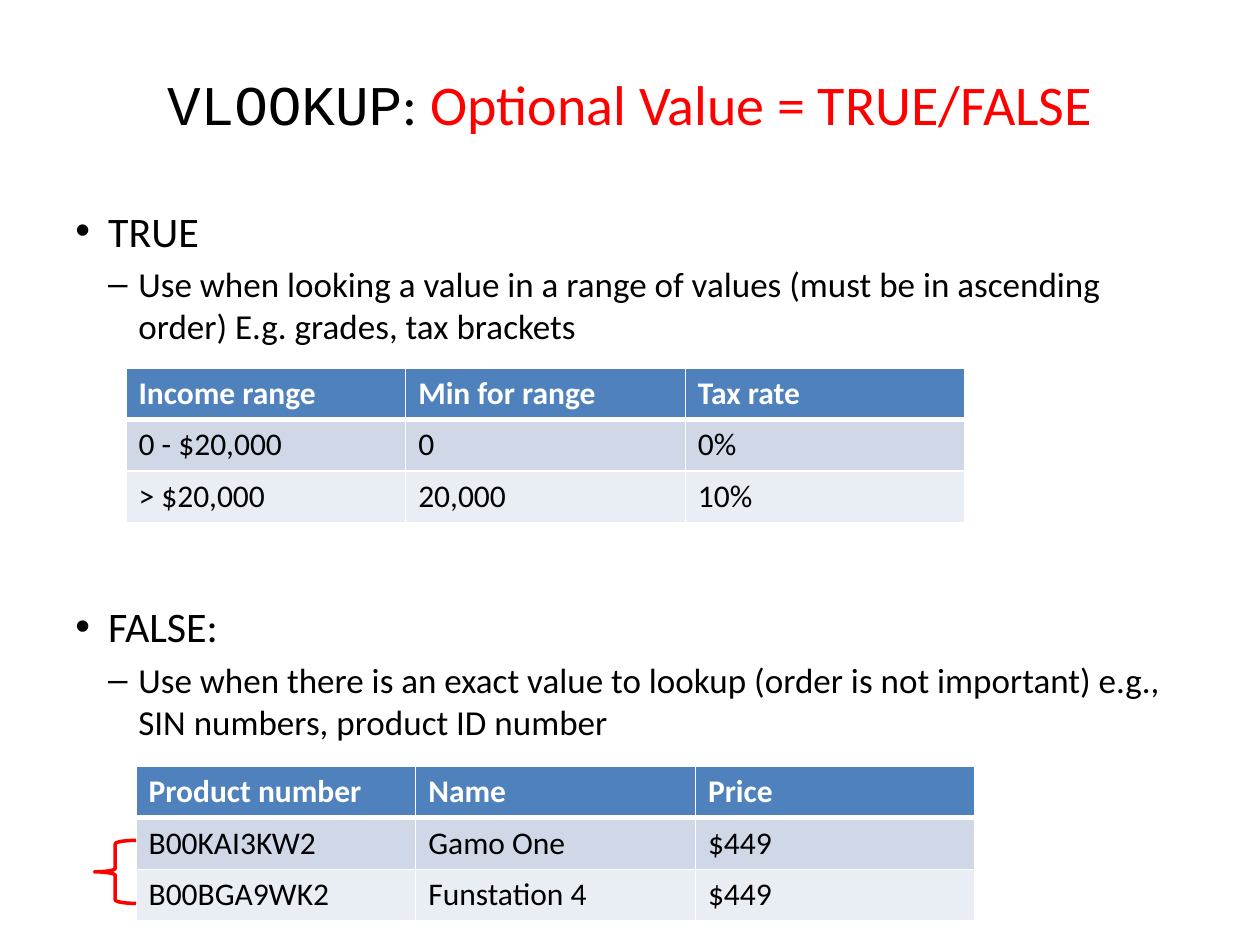
from dataclasses import dataclass

from lxml import etree
from pptx import Presentation
from pptx.dml.color import RGBColor
from pptx.enum.shapes import MSO_SHAPE
from pptx.enum.text import MSO_ANCHOR, PP_ALIGN
from pptx.oxml.ns import qn
from pptx.util import Inches, Pt

LEFT_BRACE = MSO_SHAPE.LEFT_BRACE
MIDDLE = MSO_ANCHOR.MIDDLE
CENTER = PP_ALIGN.CENTER


@dataclass(frozen=True)
class Theme:
    font: str = "Calibri"
    code_font: str = "Courier New"
    ink: str = "000000"
    accent: str = "FF0000"
    white: str = "FFFFFF"
    header_fill: str = "4F81BD"
    row_fills: tuple = ("D0D8E8", "E9EDF4")
    title_size: int = 32
    table_size: int = 18
    # (text size, bullet, left margin, hanging indent) for each level
    levels: tuple = ((24, "•", 0.26, 0.26), (20, "–", 0.5, 0.24))


class SlideBuilder:
    def __init__(self, slide, theme):
        self.slide = slide
        self.theme = theme

    def style(self, run, size, color, bold=False, font=None):
        run.font.name = font or self.theme.font
        run.font.size = Pt(size)
        run.font.bold = bold
        run.font.color.rgb = RGBColor.from_string(color)

    def text_frame(self, left, top, width, height):
        box = self.slide.shapes.add_textbox(
            Inches(left), Inches(top), Inches(width), Inches(height))
        box.text_frame.word_wrap = True
        return box.text_frame

    def title(self, parts, left, top, width, height):
        """Centred title; parts are (text, colour, font) triples."""
        frame = self.text_frame(left, top, width, height)
        frame.vertical_anchor = MIDDLE
        paragraph = frame.paragraphs[0]
        paragraph.alignment = CENTER
        for text, color, font in parts:
            run = paragraph.add_run()
            run.text = text
            self.style(run, self.theme.title_size, color, font=font)

    def bullets(self, texts, left, top, width, height):
        """One paragraph per text, each a level deeper than the last."""
        frame = self.text_frame(left, top, width, height)
        frame.text = "\n".join(texts)
        for paragraph, level in zip(frame.paragraphs, self.theme.levels):
            size, bullet, margin, hanging = level
            paragraph.space_before = Pt(size * 0.2)
            self.style(paragraph.runs[0], size, self.theme.ink)
            properties = paragraph._p.get_or_add_pPr()
            properties.set("marL", str(Inches(margin)))
            properties.set("indent", str(-Inches(hanging)))
            etree.SubElement(properties, qn("a:buFont"), typeface="Arial")
            etree.SubElement(properties, qn("a:buChar"), char=bullet)

    def border(self, cell, bottom_width):
        properties = cell._tc.get_or_add_tcPr()
        widths = {"a:lnL": 1, "a:lnR": 1, "a:lnT": 1, "a:lnB": bottom_width}
        for position, (tag, width) in enumerate(widths.items()):
            line = etree.Element(qn(tag), w=str(Pt(width)))
            fill = etree.SubElement(line, qn("a:solidFill"))
            etree.SubElement(fill, qn("a:srgbClr"), val=self.theme.white)
            properties.insert(position, line)

    def table(self, rows, left, top, column_width=2.22, row_height=0.41):
        theme = self.theme
        columns = len(rows[0])
        table = self.slide.shapes.add_table(
            len(rows), columns, Inches(left), Inches(top),
            Inches(column_width * columns),
            Inches(row_height * len(rows))).table
        for column in table.columns:
            column.width = Inches(column_width)
        for row_index, row in enumerate(rows):
            table.rows[row_index].height = Inches(row_height)
            is_header = row_index == 0
            fill = theme.header_fill if is_header else theme.row_fills[(row_index - 1) % 2]
            for column_index, value in enumerate(row):
                cell = table.cell(row_index, column_index)
                cell.text_frame.text = value
                self.style(cell.text_frame.paragraphs[0].runs[0], theme.table_size,
                           theme.white if is_header else theme.ink, bold=is_header)
                cell.fill.solid()
                cell.fill.fore_color.rgb = RGBColor.from_string(fill)
                self.border(cell, 3 if is_header else 1)

    def brace(self, left, top, width, height):
        brace = self.slide.shapes.add_shape(
            LEFT_BRACE, Inches(left), Inches(top), Inches(width), Inches(height))
        brace.shadow.inherit = False
        brace.fill.background()
        brace.line.color.rgb = RGBColor.from_string(self.theme.accent)
        brace.line.width = Pt(2)


def main():
    presentation = Presentation()
    presentation.slide_width = Inches(10)
    presentation.slide_height = Inches(7.5)
    theme = Theme()
    builder = SlideBuilder(
        presentation.slides.add_slide(presentation.slide_layouts[6]), theme)

    builder.title([
        ("VLOOKUP", theme.ink, theme.code_font),
        (": ", theme.ink, theme.font),
        ("Optional Value = TRUE/FALSE", theme.accent, theme.font),
    ], 0.5, 0.3, 9, 1.03)

    builder.bullets([
        "TRUE",
        "Use when looking a value in a range of values (must be in ascending "
        "order) E.g. grades, tax brackets",
    ], 0.5, 1.58, 9, 1.3)
    builder.table([
        ("Income range", "Min for range", "Tax rate"),
        ("0 - $20,000", "0", "0%"),
        ("> $20,000", "20,000", "10%"),
    ], 1, 2.92)

    builder.bullets([
        "FALSE:",
        "Use when there is an exact value to lookup (order is not important) "
        "e.g., SIN numbers, product ID number",
    ], 0.5, 4.72, 9, 1.3)
    builder.table([
        ("Product number", "Name", "Price"),
        ("B00KAI3KW2", "Gamo One", "$449"),
        ("B00BGA9WK2", "Funstation 4", "$449"),
    ], 1.08, 6.08)
    builder.brace(0.75, 6.67, 0.33, 0.5)

    presentation.save("out.pptx")


if __name__ == "__main__":
    main()
